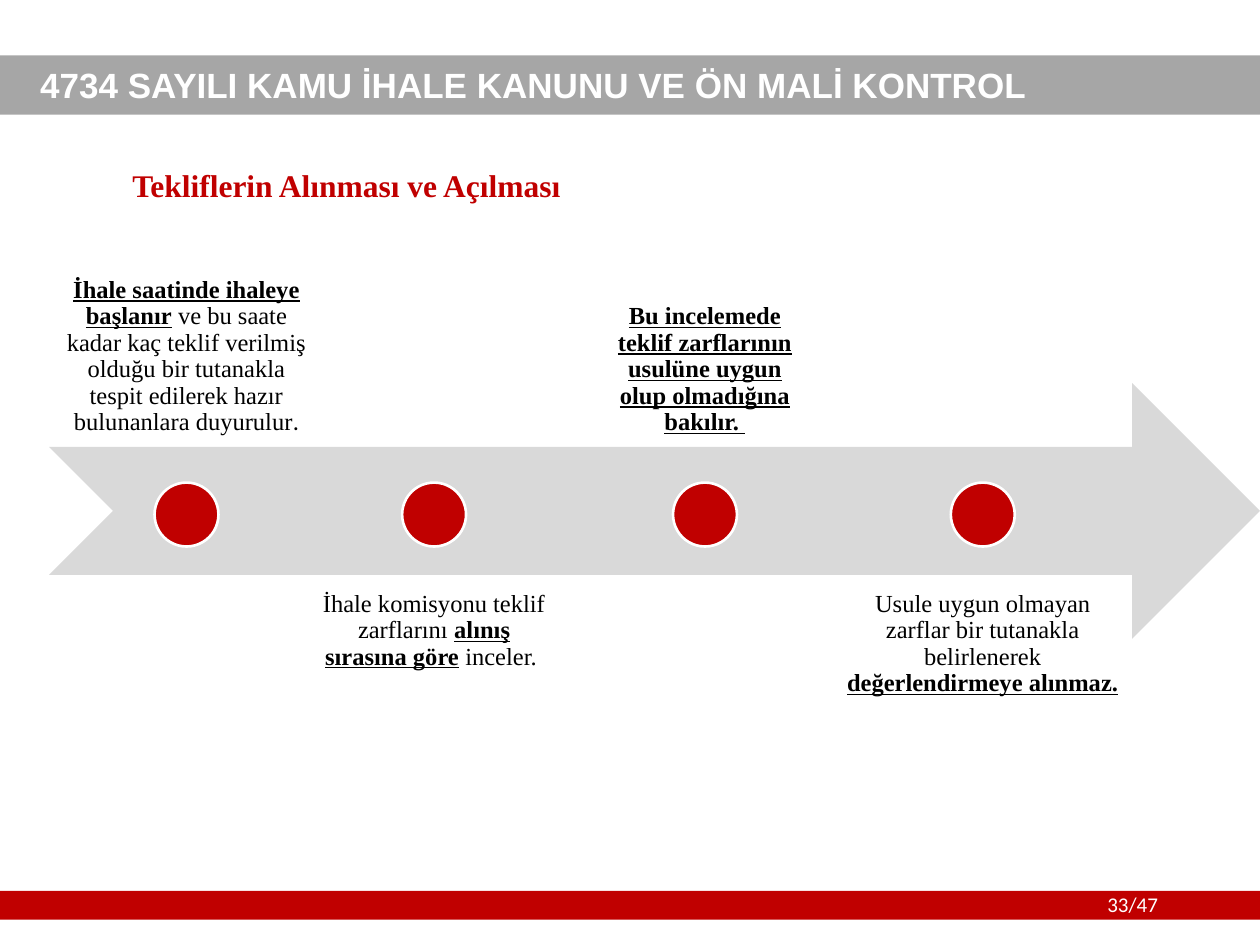
from pptx import Presentation
from pptx.dml.color import RGBColor
from pptx.enum.shapes import MSO_SHAPE
from pptx.enum.text import MSO_ANCHOR, MSO_AUTO_SIZE, PP_ALIGN
from pptx.util import Inches, Pt

RECTANGLE, OVAL = MSO_SHAPE.RECTANGLE, MSO_SHAPE.OVAL
NOTCHED_ARROW = MSO_SHAPE.NOTCHED_RIGHT_ARROW
TOP, MIDDLE, BOTTOM = MSO_ANCHOR.TOP, MSO_ANCHOR.MIDDLE, MSO_ANCHOR.BOTTOM
LEFT, CENTER = PP_ALIGN.LEFT, PP_ALIGN.CENTER
COLORS = {"red": "C00000", "gray": "A6A6A6", "light": "D9D9D9",
          "white": "FFFFFF", "black": "000000"}
SERIF = "Times New Roman"

presentation = Presentation()
presentation.slide_width, presentation.slide_height = Inches(10), Inches(7.5)
slide = presentation.slides.add_slide(presentation.slide_layouts[5])


def add_filled(kind, left, top, width, height, color):
    shape = slide.shapes.add_shape(
        kind, Inches(left), Inches(top), Inches(width), Inches(height))
    shape.shadow.inherit = False
    shape.fill.solid()
    shape.fill.fore_color.rgb = RGBColor.from_string(COLORS[color])
    shape.line.fill.background()
    return shape


def write(shape, runs, size, color, anchor=TOP, align=LEFT, spacing=0.9):
    """Fill the shape with one paragraph of (text, font, emphasis) runs."""
    frame = shape.text_frame
    frame.word_wrap = True
    frame.auto_size = MSO_AUTO_SIZE.NONE
    frame.vertical_anchor = anchor
    paragraph = frame.paragraphs[0]
    paragraph.alignment = align
    paragraph.line_spacing = spacing
    for text, font_name, emphasis in runs:
        run = paragraph.add_run()
        run.text = text
        run.font.name = font_name
        run.font.size = Pt(size)
        run.font.bold = "b" in emphasis
        run.font.underline = "u" in emphasis
        run.font.color.rgb = RGBColor.from_string(COLORS[color])


# Header and footer bands
add_filled(RECTANGLE, 0, 7.07, 10, 0.23, "red")
add_filled(RECTANGLE, 0, 0.44, 10, 0.47, "gray")
header = slide.shapes.add_textbox(Inches(0.22), Inches(0.46), Inches(9.05), Inches(0.47))
write(header, [("4734 SAYILI KAMU İHALE KANUNU VE ÖN MALİ KONTROL", "Arial", "b")],
      20, "white", MIDDLE)
page_number = slide.shapes.add_textbox(Inches(8.69), Inches(7.03), Inches(0.93), Inches(0.3))
write(page_number, [("33/47", "Calibri", "")], 12, "white", spacing=1.0)

# Slide title
title = slide.shapes.title
title.left, title.top = Inches(0.95), Inches(1.3)
title.width, title.height = Inches(9.05), Inches(0.47)
write(title, [("Tekliflerin Alınması ve Açılması", SERIF, "b")], 18, "red")

# Timeline arrow
BAND = 2.03
ARROW_TOP = 3.04
DOT = BAND / 4
add_filled(NOTCHED_ARROW, 0.39, ARROW_TOP, 9.61, BAND, "light")

# Steps alternate above and below the arrow: left, width, runs
steps = [
    (0.39, 2.18, [
        ("İhale saatinde ihaleye başlanır", SERIF, "bu"),
        (" ", SERIF, "b"),
        ("ve bu saate kadar kaç teklif verilmiş olduğu bir tutanakla tespit "
         "edilerek hazır bulunanlara duyurulur", SERIF, ""),
        (".", "Calibri", "")]),
    (2.44, 2.01, [
        ("İhale komisyonu teklif zarflarını ", SERIF, ""),
        ("alınış sırasına göre", SERIF, "bu"),
        (" ", SERIF, "b"),
        ("inceler. ", SERIF, "")]),
    (4.68, 1.83, [
        ("Bu incelemede teklif zarflarının usulüne uygun olup olmadığına "
         "bakılır. ", SERIF, "bu")]),
    (6.56, 2.48, [
        ("Usule uygun olmayan zarflar bir tutanakla belirlenerek ", SERIF, ""),
        ("değerlendirmeye alınmaz.", SERIF, "bu")]),
]
for index, (left, width, runs) in enumerate(steps):
    above = index % 2 == 0
    top = 1.54 if above else 4.58
    label = slide.shapes.add_textbox(Inches(left), Inches(top), Inches(width), Inches(BAND))
    frame = label.text_frame
    frame.margin_left = frame.margin_right = Inches(0.11)
    frame.margin_top = frame.margin_bottom = Inches(0.11)
    write(label, runs, 14, "black", BOTTOM if above else TOP, CENTER)

    # Marker centred on its label
    dot = add_filled(OVAL, left + (width - DOT) / 2, 3.83, DOT, DOT, "red")
    dot.line.color.rgb = RGBColor.from_string(COLORS["white"])
    dot.line.width = Pt(1.5)

presentation.save("out.pptx")
